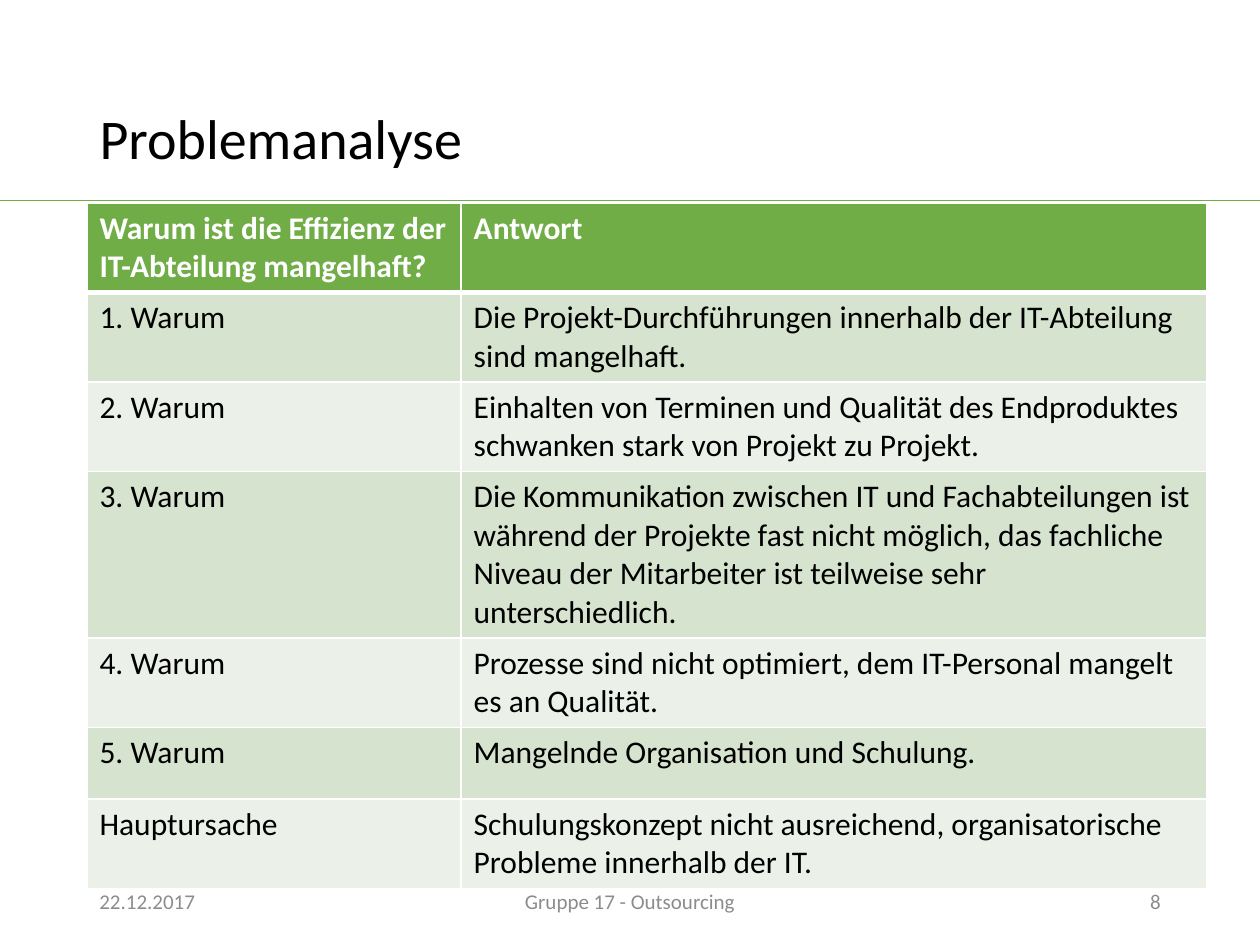
"""Build the problem analysis slide with its five-whys table."""
from lxml.etree import SubElement
from pptx import Presentation
from pptx.dml.color import RGBColor
from pptx.enum.shapes import MSO_CONNECTOR
from pptx.enum.text import MSO_ANCHOR, PP_ALIGN
from pptx.oxml.ns import qn
from pptx.util import Inches, Pt

COLORS = {
    "accent": "70AD47",
    "odd": "D5E3CF",
    "even": "EBF1E9",
    "text": "000000",
    "white": "FFFFFF",
    "footer": "8C8C8C",
}
ANALYSIS = [
    ("Warum ist die Effizienz der IT-Abteilung mangelhaft?", "Antwort"),
    ("1. Warum", "Die Projekt-Durchführungen innerhalb der IT-Abteilung sind mangelhaft."),
    ("2. Warum", "Einhalten von Terminen und Qualität des Endproduktes schwanken stark von Projekt zu Projekt."),
    ("3. Warum", "Die Kommunikation zwischen IT und Fachabteilungen ist während der Projekte fast nicht "
                 "möglich, das fachliche Niveau der Mitarbeiter ist teilweise sehr unterschiedlich."),
    ("4. Warum", "Prozesse sind nicht optimiert, dem IT-Personal mangelt es an Qualität."),
    ("5. Warum", "Mangelnde Organisation und Schulung."),
    ("Hauptursache", "Schulungskonzept nicht ausreichend, organisatorische Probleme innerhalb der IT."),
]
FOOTERS = [
    ("22.12.2017", 0.69, 2.25, PP_ALIGN.LEFT),
    ("Gruppe 17 - Outsourcing", 3.31, 3.38, PP_ALIGN.CENTER),
    ("8", 7.06, 2.25, PP_ALIGN.RIGHT),
]


class SlideBuilder:
    """Hold the style and the current slide, and add elements to it."""

    def __init__(self, slide, font="Calibri"):
        self.slide = slide
        self.font = font

    def color(self, name):
        return RGBColor.from_string(COLORS[name])

    def set_text(self, frame, text, size, color, bold=False, align=PP_ALIGN.LEFT):
        frame.text = text
        frame.word_wrap = True
        paragraph = frame.paragraphs[0]
        paragraph.alignment = align
        font = paragraph.runs[0].font
        font.name, font.size, font.bold = self.font, Pt(size), bold
        font.color.rgb = self.color(color)

    def rule(self, y):
        line = self.slide.shapes.add_connector(
            MSO_CONNECTOR.STRAIGHT, 0, Inches(y), Inches(10), Inches(y))
        line.line.color.rgb = self.color("accent")
        line.line.width = Pt(0.5)
        SubElement(line._element.spPr, qn("a:effectLst"))

    def title(self, text, left, top, width, height):
        title = self.slide.shapes.title
        title.left, title.top = Inches(left), Inches(top)
        title.width, title.height = Inches(width), Inches(height)
        self.set_text(title.text_frame, text, 32, "text")
        title.text_frame.vertical_anchor = MSO_ANCHOR.MIDDLE
        title.text_frame.paragraphs[0].line_spacing = 0.9

    def borders(self, cell, widths):
        properties = cell._tc.get_or_add_tcPr()
        for side, width in widths.items():
            border = SubElement(properties, qn(f"a:ln{side}"), w=str(Pt(width)))
            fill = SubElement(border, qn("a:solidFill"))
            SubElement(fill, qn("a:srgbClr"), val=COLORS["white"])

    def table(self, rows, left, top, column_widths, row_height):
        table = self.slide.shapes.add_table(
            len(rows), len(column_widths), Inches(left), Inches(top),
            Inches(sum(column_widths)), Inches(row_height * len(rows))).table
        for column, width in zip(table.columns, column_widths):
            column.width = Inches(width)
        for r, texts in enumerate(rows):
            header = r == 0
            fill = "accent" if header else ("even", "odd")[r % 2]
            table.rows[r].height = Inches(row_height)
            for c, text in enumerate(texts):
                cell = table.cell(r, c)
                self.set_text(cell.text_frame, text, 18, "white" if header else "text", header)
                self.borders(cell, {"L": 1, "R": 1, "T": 3 if r == 1 else 1, "B": 3 if header else 1})
                cell.fill.solid()
                cell.fill.fore_color.rgb = self.color(fill)

    def footer(self, text, left, width, align):
        box = self.slide.shapes.add_textbox(Inches(left), Inches(6.95), Inches(width), Inches(0.4))
        self.set_text(box.text_frame, text, 12, "footer", align=align)
        box.text_frame.vertical_anchor = MSO_ANCHOR.MIDDLE


def main():
    presentation = Presentation()
    presentation.slide_width, presentation.slide_height = Inches(10), Inches(7.5)
    builder = SlideBuilder(presentation.slides.add_slide(presentation.slide_layouts[5]))
    builder.rule(1.59)
    builder.title("Problemanalyse", 0.69, 0.4, 8.62, 1.45)
    builder.table(ANALYSIS, 0.69, 1.61, (2.97, 5.92), 0.57)
    for footer in FOOTERS:
        builder.footer(*footer)
    presentation.save("out.pptx")


if __name__ == "__main__":
    main()
